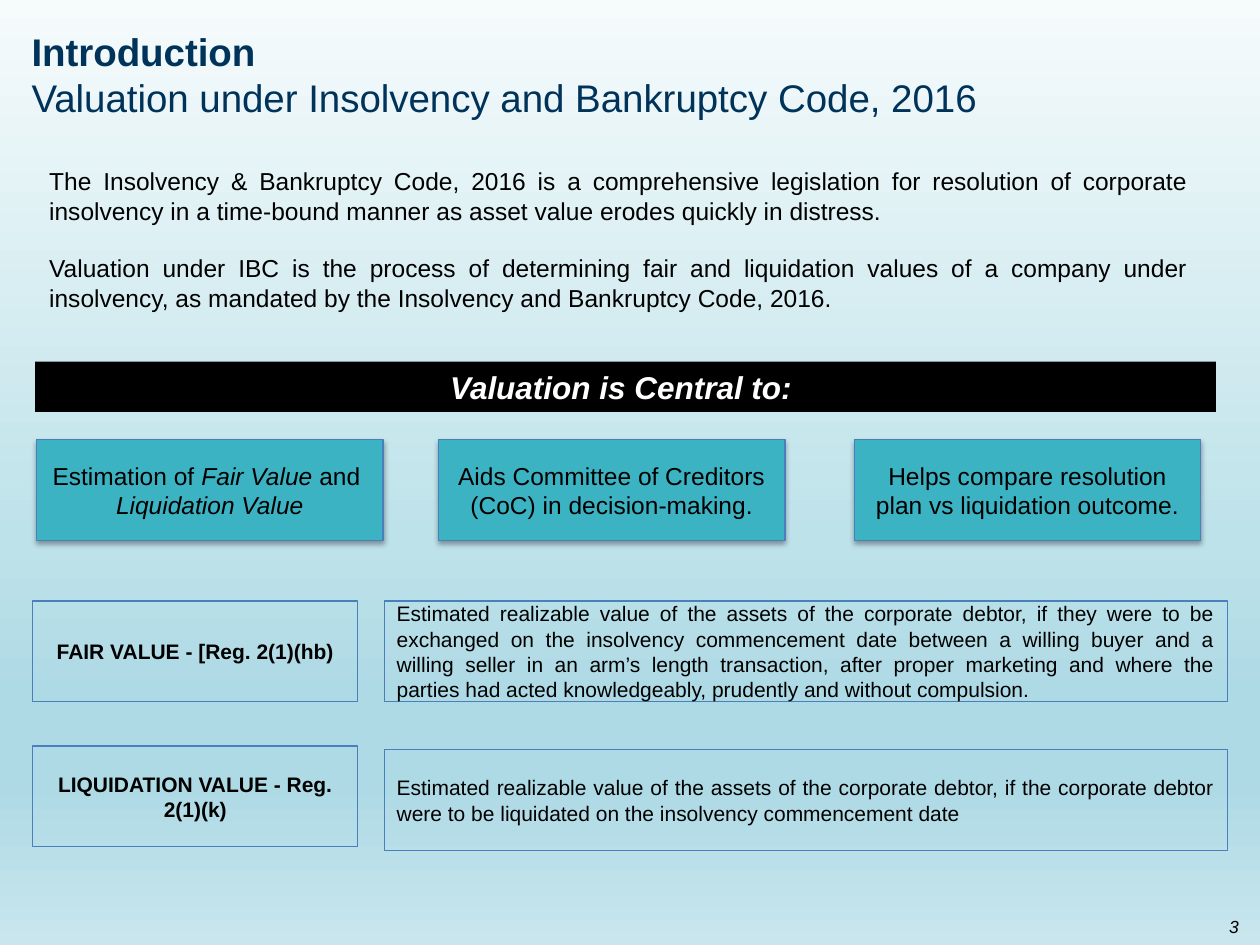
from lxml.etree import SubElement
from pptx import Presentation
from pptx.dml.color import RGBColor
from pptx.enum.shapes import MSO_SHAPE as Shape
from pptx.enum.text import MSO_ANCHOR as Anchor, MSO_AUTO_SIZE as AutoSize, PP_ALIGN as Align
from pptx.oxml.ns import qn
from pptx.util import Inches, Pt

NAVY = RGBColor(0x00, 0x33, 0x5A)
BLACK = RGBColor(0x00, 0x00, 0x00)
WHITE = RGBColor(0xFF, 0xFF, 0xFF)
TEAL = RGBColor(0x3B, 0xB3, 0xC2)
OUTLINE = RGBColor(0x4B, 0x7E, 0xBC)
SKY_STOPS = [
    (0, RGBColor(0xF6, 0xFB, 0xFC)),
    (57, RGBColor(0xBE, 0xE2, 0xEA)),
    (74, RGBColor(0xAE, 0xDA, 0xE5)),
    (83, RGBColor(0xAE, 0xDA, 0xE5)),
    (100, RGBColor(0xC9, 0xE6, 0xEE)),
]

HEADING = [[("Introduction", "b")], [("Valuation under Insolvency and Bankruptcy Code, 2016", "")]]
OVERVIEW = [
    [("The Insolvency & Bankruptcy Code, 2016 is a comprehensive legislation for resolution of "
      "corporate insolvency in a time-bound manner as asset value erodes quickly in distress.", "")],
    [("Valuation under IBC is the process of determining fair and liquidation values of a company "
      "under insolvency, as mandated by the Insolvency and Bankruptcy Code, 2016.", "")],
]
ROLES = [
    (0.29, [[("Estimation of ", ""), ("Fair Value ", "i"), ("and ", "")],
            [("Liquidation Value", "i")]]),
    (3.48, [[("Aids Committee of Creditors (CoC) in decision-making.", "")]]),
    (6.78, [[("Helps compare resolution plan vs liquidation outcome.", "")]]),
]
DEFINITIONS = [
    (4.77, 4.77, "FAIR VALUE - [Reg. 2(1)(hb)",
     "Estimated realizable value of the assets of the corporate debtor, if they were to be "
     "exchanged on the insolvency commencement date between a willing buyer and a willing seller "
     "in an arm’s length transaction, after proper marketing and where the parties had acted "
     "knowledgeably, prudently and without compulsion."),
    (5.92, 5.95, "LIQUIDATION VALUE - Reg. 2(1)(k)",
     "Estimated realizable value of the assets of the corporate debtor, if the corporate debtor "
     "were to be liquidated on the insolvency commencement date"),
]


def write(shape, paragraphs, size, color=BLACK, align=Align.CENTER, anchor=Anchor.MIDDLE, gap=0):
    """Fill a shape with paragraphs of (text, style) runs, gap points apart."""
    frame = shape.text_frame
    frame.word_wrap = True
    frame.auto_size = AutoSize.NONE
    frame.vertical_anchor = anchor
    for index, runs in enumerate(paragraphs):
        line = frame.add_paragraph() if index else frame.paragraphs[0]
        line.alignment = align
        line.space_before = Pt(gap if index else 0)
        for text, style in runs:
            run = line.add_run()
            run.text = text
            run.font.name = "Arial"
            run.font.size = Pt(size)
            run.font.color.rgb = color
            run.font.bold = "b" in style
            run.font.italic = "i" in style


def place(shape, box):
    """Move a placeholder to a box in inches."""
    shape.left, shape.top, shape.width, shape.height = map(Inches, box)


def add_box(slide, box, fill=None, outline=OUTLINE):
    """Add a flat rectangle with an optional fill and outline."""
    rect = slide.shapes.add_shape(Shape.RECTANGLE, *map(Inches, box))
    rect.shadow.inherit = False
    if fill is None:
        rect.fill.background()
    else:
        rect.fill.solid()
        rect.fill.fore_color.rgb = fill
    if outline is None:
        rect.line.fill.background()
    else:
        rect.line.color.rgb = outline
        rect.line.width = Pt(0.75)
    return rect


def add_soft_shadow(shape):
    """Give a shape a soft black shadow below it."""
    effects = shape._element.spPr.find(qn("a:effectLst"))
    shadow = SubElement(effects, qn("a:outerShdw"), blurRad=str(Pt(3.1)), dist=str(Pt(1.8)),
                        dir="5400000", rotWithShape="0")
    tint = SubElement(shadow, qn("a:srgbClr"), val=str(BLACK))
    SubElement(tint, qn("a:alpha"), val="35000")


def paint_background(slide):
    """Paint the vertical sky gradient behind the slide."""
    fill = slide.background.fill
    fill.gradient()
    fill.gradient_angle = 270
    stops = slide._element.find(".//" + qn("a:gsLst"))
    for stop in list(stops):
        stops.remove(stop)
    for percent, color in SKY_STOPS:
        stop = SubElement(stops, qn("a:gs"), pos=str(percent * 1000))
        SubElement(stop, qn("a:srgbClr"), val=str(color))


def add_heading(slide, box):
    """Write the two-line heading in the title placeholder."""
    place(slide.shapes.title, box)
    write(slide.shapes.title, HEADING, 22, NAVY, Align.LEFT)


def add_overview(slide, box):
    """Write the introductory paragraphs in the body placeholder."""
    overview = slide.placeholders[1]
    place(overview, box)
    for _ in OVERVIEW[1:]:
        overview.text_frame.add_paragraph()
    for line in overview.text_frame.paragraphs:
        props = line._p.get_or_add_pPr()
        props.set("marL", "0")
        props.set("indent", "0")
        SubElement(props, qn("a:buNone"))
    for line in overview.text_frame.paragraphs[1:]:
        overview.text_frame._txBody.remove(line._p)
    write(overview, OVERVIEW, 14, align=Align.JUSTIFY, anchor=Anchor.TOP, gap=16)
    for line in overview.text_frame.paragraphs[1:]:
        props = line._p.get_or_add_pPr()
        props.set("marL", "0")
        props.set("indent", "0")
        SubElement(props, qn("a:buNone"))


def add_roles(slide, box):
    """Add the banner and the row of role cards under it."""
    left, top, width, height = box
    banner = add_box(slide, (left, top, width, 0.4), BLACK, None)
    write(banner, [[("Valuation is Central to: ", "bi")]], 18, WHITE)
    for card_left, paragraphs in ROLES:
        card = add_box(slide, (card_left, top + height - 0.8, 2.75, 0.8), TEAL)
        add_soft_shadow(card)
        write(card, paragraphs, 14)


def add_definitions(slide, left, width):
    """Add a term box and a meaning box for each kind of value."""
    for term_top, meaning_top, term, meaning in DEFINITIONS:
        term_box = add_box(slide, (left, term_top, 2.58, 0.8))
        write(term_box, [[(term, "b")]], 12)
        meaning_box = add_box(slide, (left + width - 6.69, meaning_top, 6.69, 0.8))
        write(meaning_box, [[(meaning, "")]], 12, align=Align.JUSTIFY)


def add_page_number(slide, box):
    """Write the page number in the corner."""
    number = slide.shapes.add_textbox(*map(Inches, box))
    write(number, [[("3", "i")]], 10, align=Align.RIGHT)


def main():
    """Build the slide and save it."""
    deck = Presentation()
    deck.slide_width, deck.slide_height = Inches(10), Inches(7.5)
    slide = deck.slides.add_slide(deck.slide_layouts[1])
    paint_background(slide)
    add_heading(slide, (0.15, 0.04, 9.69, 1.1))
    add_overview(slide, (0.29, 1.27, 9.24, 1.28))
    add_roles(slide, (0.28, 2.87, 9.37, 1.42))
    add_definitions(slide, 0.26, 9.48)
    add_page_number(slide, (7.6, 7.15, 2.33, 0.4))
    deck.save("out.pptx")


if __name__ == "__main__":
    main()
